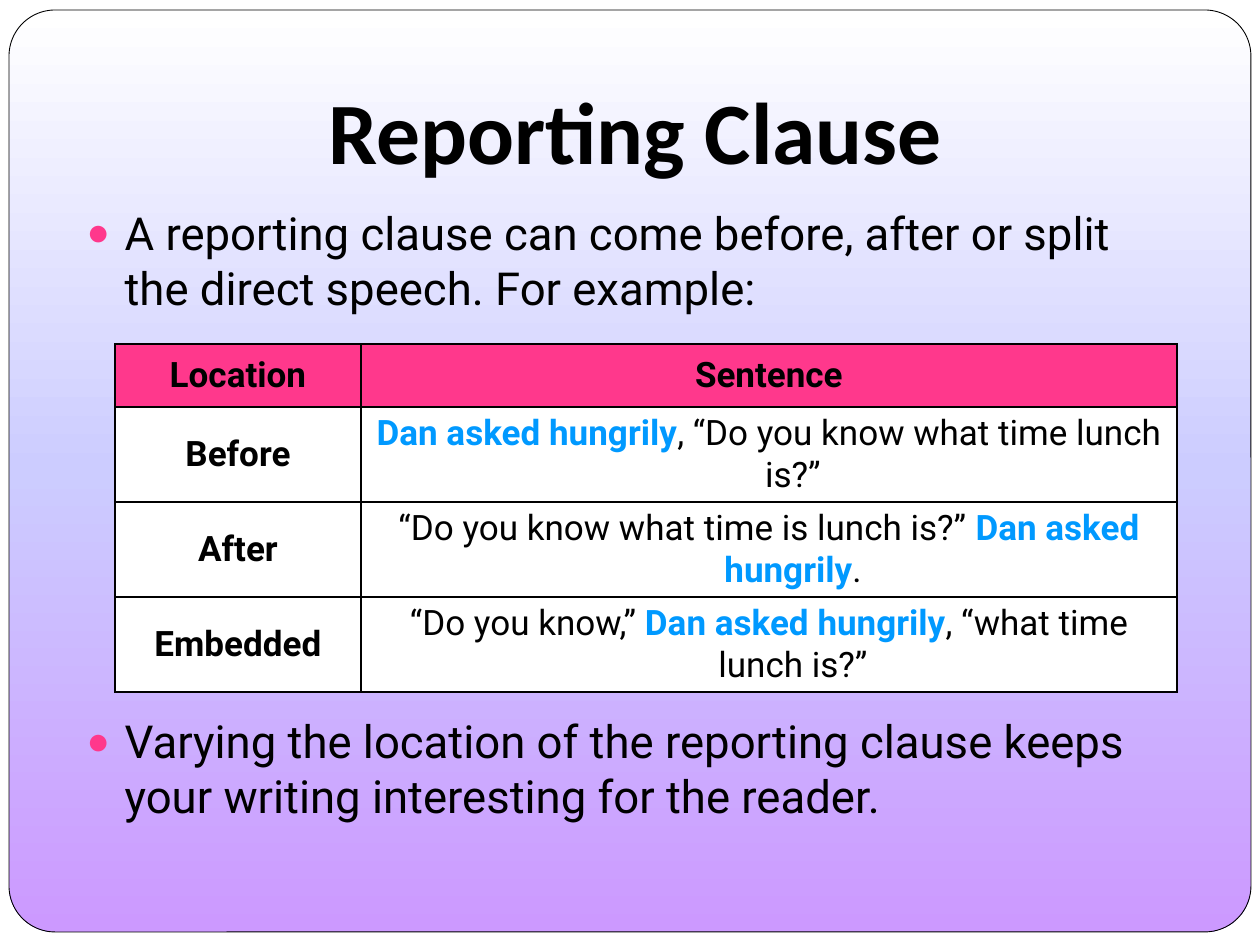
from copy import deepcopy
from dataclasses import dataclass

from lxml.etree import SubElement
from pptx import Presentation
from pptx.dml.color import RGBColor
from pptx.enum.shapes import MSO_SHAPE
from pptx.enum.text import MSO_ANCHOR, MSO_AUTO_SIZE, PP_ALIGN
from pptx.oxml.ns import qn
from pptx.util import Emu, Pt


@dataclass(frozen=True)
class Theme:
    ink: str = "000000"
    paper: str = "FFFFFF"
    accent: str = "FF388C"
    clause: str = "0099FF"
    gradient: tuple = ((0, "FFFFFF"), (0.5, "CCCCFF"), (1, "CC99FF"))
    heading_font: str = "Calibri"
    body_font: str = "Roboto"
    title_size: int = 50
    bullet_size: int = 26
    table_size: int = 20


THEME = Theme()
TITLE = "Reporting Clause"
BULLETS = [
    ("A reporting clause can come before, after or split the direct speech. For example:", 5.8),
    ("Varying the location of the reporting clause keeps your writing interesting for the reader.", 228),
]
HEADERS = ("Location", "Sentence")
CLAUSE = "Dan asked hungrily"
EXAMPLES = [
    ("Before", (CLAUSE, ", “Do you know what time lunch is?”")),
    ("After", ("“Do you know what time is lunch is?” ", CLAUSE, ".")),
    ("Embedded", ("“Do you know,” ", CLAUSE, ", “what time lunch is?”")),
]

SLIDE_SIZE = (1260, 945)
PANEL_BOX = (9, 10, 1242, 922)
TITLE_BOX = (74, 38, 1123, 157)
BODY_BOX = (74, 199, 1123, 630)
TABLE_BOX = (115, 344, 1062, 348)
COLUMN_WIDTHS = (246, 816)
ROW_HEIGHTS = (63, 95, 95, 95)
BULLET_INDENT = 38
CELL_INDENT = 48


def px(length):
    return Emu(round(length * 914400 / 126))


def place(shape, box):
    shape.left, shape.top, shape.width, shape.height = map(px, box)


def style(run, size, font, color=THEME.ink, bold=False):
    run.font.size = Pt(size)
    run.font.name = font
    run.font.bold = bold
    run.font.color.rgb = RGBColor.from_string(color)


def hang(paragraph, indent):
    properties = paragraph._p.get_or_add_pPr()
    properties.set("marL", str(px(indent)))
    properties.set("indent", str(-px(indent)))
    return properties


def add_panel(slide):
    panel = slide.shapes.add_shape(MSO_SHAPE.ROUNDED_RECTANGLE, *map(px, PANEL_BOX))
    panel.adjustments[0] = 0.05
    panel.shadow.inherit = False
    panel.line.color.rgb = RGBColor.from_string(THEME.ink)
    panel.line.width = Pt(0.5)
    panel.fill.gradient()
    panel.fill.gradient_angle = 270
    stop_list = panel._element.spPr.find(".//" + qn("a:gsLst"))
    stop_list.append(deepcopy(stop_list[0]))
    for stop, (position, color) in zip(panel.fill.gradient_stops, THEME.gradient):
        stop.position = position
        stop.color.rgb = RGBColor.from_string(color)
    slide.shapes._spTree.insert(2, panel._element)


def fill_title(title):
    place(title, TITLE_BOX)
    frame = title.text_frame
    frame.text = TITLE
    frame.auto_size = MSO_AUTO_SIZE.NONE
    frame.vertical_anchor = MSO_ANCHOR.BOTTOM
    frame.margin_bottom = px(13)
    heading = frame.paragraphs[0]
    heading.alignment = PP_ALIGN.CENTER
    style(heading.runs[0], THEME.title_size, THEME.heading_font, bold=True)


def fill_body(body):
    place(body, BODY_BOX)
    frame = body.text_frame
    frame.text = "\n".join(text for text, _ in BULLETS)
    frame.auto_size = MSO_AUTO_SIZE.NONE
    for bullet, (_, gap) in zip(frame.paragraphs, BULLETS):
        bullet.space_before = Pt(gap)
        properties = hang(bullet, BULLET_INDENT)
        bullet_color = SubElement(properties, qn("a:buClr"))
        SubElement(bullet_color, qn("a:srgbClr"), val=THEME.accent)
        SubElement(properties, qn("a:buSzPct"), val="85000")
        SubElement(properties, qn("a:buChar"), char="●")
        style(bullet.runs[0], THEME.bullet_size, THEME.body_font)


def add_borders(cell):
    properties = cell._tc.get_or_add_tcPr()
    for side in ("a:lnL", "a:lnR", "a:lnT", "a:lnB"):
        border = SubElement(properties, qn(side), w=str(Pt(1)))
        border_fill = SubElement(border, qn("a:solidFill"))
        SubElement(border_fill, qn("a:srgbClr"), val=THEME.ink)


def fill_cell(cell, parts, background, bold, indent):
    add_borders(cell)
    cell.fill.solid()
    cell.fill.fore_color.rgb = RGBColor.from_string(background)
    cell.vertical_anchor = MSO_ANCHOR.MIDDLE
    line = cell.text_frame.paragraphs[0]
    line.alignment = PP_ALIGN.CENTER
    hang(line, indent)
    for part in parts:
        run = line.add_run()
        run.text = part
        is_clause = part == CLAUSE
        color = THEME.clause if is_clause else THEME.ink
        style(run, THEME.table_size, THEME.body_font, color, bold or is_clause)


def add_examples(slide):
    table = slide.shapes.add_table(
        len(EXAMPLES) + 1, len(HEADERS), *map(px, TABLE_BOX)
    ).table
    for column, width in zip(table.columns, COLUMN_WIDTHS):
        column.width = px(width)
    for row, height in zip(table.rows, ROW_HEIGHTS):
        row.height = px(height)
    for index, header in enumerate(HEADERS):
        fill_cell(table.cell(0, index), [header], THEME.accent, True, 0)
    for index, (location, sentence) in enumerate(EXAMPLES, 1):
        fill_cell(table.cell(index, 0), [location], THEME.paper, True, CELL_INDENT)
        fill_cell(table.cell(index, 1), sentence, THEME.paper, False, CELL_INDENT)


def main():
    deck = Presentation()
    deck.slide_width, deck.slide_height = map(px, SLIDE_SIZE)
    slide = deck.slides.add_slide(deck.slide_layouts[1])
    slide.background.fill.solid()
    slide.background.fill.fore_color.rgb = RGBColor.from_string(THEME.paper)
    add_panel(slide)
    fill_title(slide.shapes.title)
    fill_body(slide.placeholders[1])
    add_examples(slide)
    deck.save("out.pptx")


if __name__ == "__main__":
    main()
